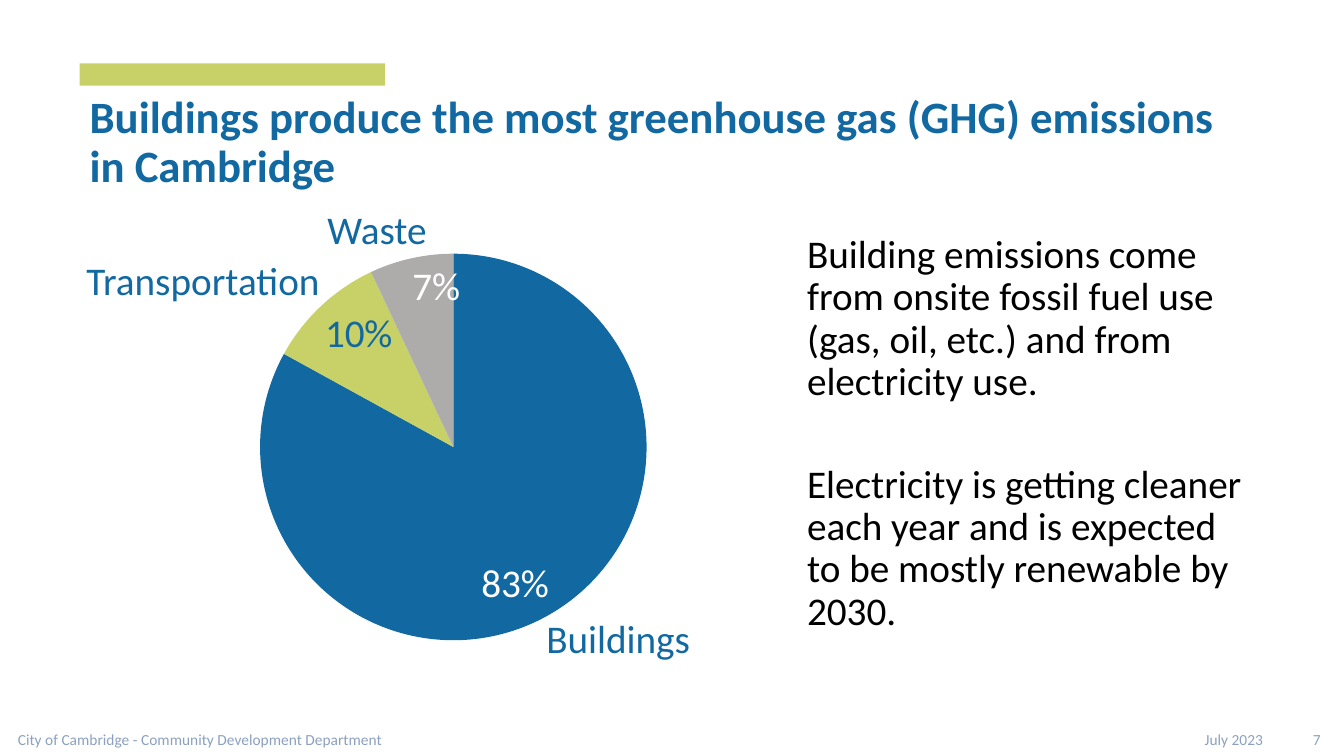
from lxml.etree import SubElement as Sub
from pptx import Presentation
from pptx.chart.data import CategoryChartData as Data
from pptx.dml.color import RGBColor as RGB
from pptx.enum.chart import XL_CHART_TYPE as Kind, XL_LABEL_POSITION as Spot
from pptx.enum.shapes import MSO_SHAPE as Form
from pptx.enum.text import MSO_ANCHOR as Anchor, PP_ALIGN as Align
from pptx.oxml.ns import qn
from pptx.util import Cm, Pt

BLUE = RGB(0x12, 0x69, 0xA2)
LIME = RGB(0xC8, 0xD0, 0x68)
GREY = RGB(0xAE, 0xAB, 0xAB)
MIST = RGB(0x8C, 0xA1, 0xBF)
BLACK = RGB(0, 0, 0)
WHITE = RGB(255, 255, 255)
FONT = "Calibri"

TITLE = "Buildings produce the most greenhouse gas (GHG) emissions in Cambridge"
POINTS = [
    ("Building emissions come from onsite fossil fuel use (gas, oil, etc.) and from electricity use.", 6),
    ("Electricity is getting cleaner each year and is expected to be mostly renewable by 2030.", 43),
]
SHARES = [
    ("Buildings", 83, BLUE, WHITE, (13.77, 15.6, 3.9, 1.07), Align.LEFT),
    ("Transportation", 10, LIME, BLUE, (1.9, 6.58, 6.15, 1.07), Align.RIGHT),
    ("Waste", 7, GREY, WHITE, (8, 5.31, 2.75, 1.07), Align.RIGHT),
]
FOOTER = [
    ("City of Cambridge - Community Development Department", 0.2, 11.43, Align.LEFT),
    ("July 2023", 27.08, 5, Align.RIGHT),
    ("7", 32.33, 1.2, Align.RIGHT),
]
PLOT = {"x": 0.06, "y": 0.02, "w": 0.88, "h": 0.96}


def style(font, size, color, bold=False):
    font.name, font.size, font.bold = FONT, Pt(size), bold
    font.color.rgb = color


def write(slide, area, lines, size, color, align=Align.LEFT, bold=False,
          anchor=Anchor.MIDDLE, lead=0.9, tight=False):
    frame = slide.shapes.add_textbox(*map(Cm, area)).text_frame
    frame.word_wrap = True
    frame.vertical_anchor = anchor
    if tight:
        frame.margin_left = frame.margin_right = 0
        frame.margin_top = frame.margin_bottom = 0
    for i, (text, gap) in enumerate(lines):
        para = frame.paragraphs[0] if i == 0 else frame.add_paragraph()
        para.text = text
        para.alignment = align
        para.line_spacing = lead
        para.space_before = Pt(gap)
        style(para.font, size, color, bold)


def draw_pie(slide):
    data = Data(number_format='0"%"')
    data.categories = [share[0] for share in SHARES]
    data.add_series("Emissions", [share[1] for share in SHARES])
    area = map(Cm, (5.89, 6.17, 11.07, 10.19))
    chart = slide.shapes.add_chart(Kind.PIE, *area, data).chart
    chart.has_legend = chart.has_title = False
    style(chart.font, 28, BLUE)
    plot = chart.plots[0]
    plot.vary_by_categories = True
    plot.has_data_labels = True
    labels = plot.data_labels
    labels.show_value, labels.show_percentage = True, False
    labels.number_format, labels.number_format_is_linked = '0"%"', False
    labels.position = Spot.INSIDE_END
    for i, (_, _, fill, ink, _, _) in enumerate(SHARES):
        point = plot.series[0].points[i]
        point.format.fill.solid()
        point.format.fill.fore_color.rgb = fill
        point.format.line.fill.background()
        style(point.data_label.font, 28, ink)
        point.data_label.position = Spot.INSIDE_END
    area = chart.element.find(".//" + qn("c:plotArea"))
    for old in area.findall(qn("c:layout")):
        area.remove(old)
    layout = Sub(area, qn("c:layout"))
    area.insert(0, layout)
    manual = Sub(layout, qn("c:manualLayout"))
    Sub(manual, qn("c:layoutTarget"), val="inner")
    for key in "xy":
        Sub(manual, qn(f"c:{key}Mode"), val="edge")
    for key, part in PLOT.items():
        Sub(manual, qn("c:" + key), val=str(part))


def main():
    deck = Presentation()
    deck.slide_width, deck.slide_height = Cm(33.87), Cm(19.05)
    slide = deck.slides.add_slide(deck.slide_layouts[6])
    write(slide, (2.01, 2.16, 29.21, 2.92), [(TITLE, 0)], 32, BLUE, bold=True)
    bar = slide.shapes.add_shape(Form.RECTANGLE, *map(Cm, (2.01, 1.6, 7.7, 0.56)))
    bar.shadow.inherit = False
    bar.fill.solid()
    bar.fill.fore_color.rgb = LIME
    bar.line.fill.background()
    write(slide, (20.09, 5.79, 11.79, 11.3), POINTS, 28, BLACK, anchor=Anchor.TOP)
    draw_pie(slide)
    for name, _, _, _, area, align in SHARES:
        write(slide, area, [(name, 0)], 28, BLUE, align, tight=True)
    for text, left, width, align in FOOTER:
        write(slide, (left, 18.26, width, 0.74), [(text, 0)], 11, MIST, align, lead=1.0)
    deck.save("out.pptx")


if __name__ == "__main__":
    main()
